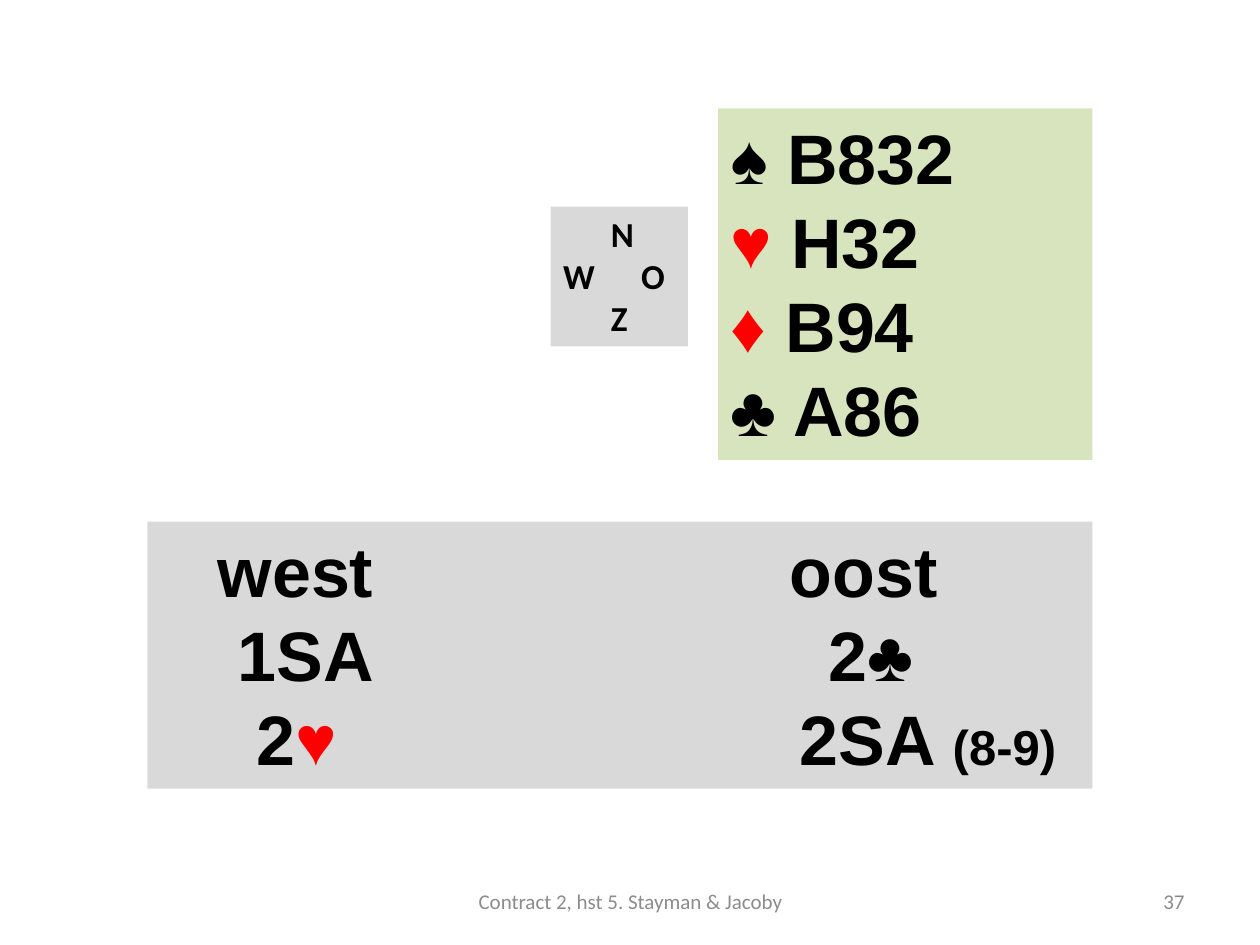
from dataclasses import dataclass

from lxml import etree
from pptx import Presentation
from pptx.dml.color import RGBColor
from pptx.enum import shapes, text
from pptx.oxml.ns import qn
from pptx.util import Inches, Pt


@dataclass(frozen=True)
class Theme:
    """Colours, fonts and type sizes of the slide."""
    black: str = "000000"
    red: str = "FF0000"
    grey: str = "D9D9D9"
    green: str = "D7E4BD"
    muted: str = "8C8C8C"
    card_font: str = "Arial"
    suit_font: str = "Times New Roman"
    label_font: str = "Calibri"
    card: int = 40
    note: int = 28
    compass: int = 20
    footer: int = 12


T = Theme()


def add_run(p, content, font=T.card_font, size=T.card, color=T.black, bold=True):
    """Append one formatted run to a paragraph."""
    r = p.add_run()
    r.text = content
    r.font.name, r.font.size, r.font.bold = font, Pt(size), bold
    r.font.color.rgb = RGBColor.from_string(color)


def add_panel(s, box, fill):
    """Add a plain filled rectangle and return its text frame."""
    sp = s.shapes.add_shape(shapes.MSO_SHAPE.RECTANGLE, *map(Inches, box))
    sp.shadow.inherit = False
    sp.fill.solid()
    sp.fill.fore_color.rgb = RGBColor.from_string(fill)
    sp.line.fill.background()
    tf = sp.text_frame
    tf.word_wrap = True
    tf.vertical_anchor = text.MSO_ANCHOR.TOP
    return tf


def add_line(tf, index, tabs=()):
    """Return the left-aligned paragraph at an index, with tab stops in inches."""
    p = tf.paragraphs[0] if index == 0 else tf.add_paragraph()
    p.alignment = text.PP_ALIGN.LEFT
    if tabs:
        stops = etree.SubElement(p._p.get_or_add_pPr(), qn("a:tabLst"))
        for stop in tabs:
            etree.SubElement(stops, qn("a:tab"), pos=str(Inches(stop)), algn="l")
    return p


def add_hand(s, box):
    """Show the four suits of one hand."""
    tf = add_panel(s, box, T.green)
    hand = [("♠", "B832", T.black, T.suit_font), ("♥", "H32", T.red, T.card_font),
            ("♦", "B94", T.red, T.card_font), ("♣", "A86", T.black, T.card_font)]
    for i, (suit, cards, color, font) in enumerate(hand):
        p = add_line(tf, i)
        add_run(p, suit, color=color, font=font)
        add_run(p, f" {cards}")


def add_compass(s, box):
    """Show the four wind directions."""
    tf = add_panel(s, box, T.grey)
    for i, (label, stop) in enumerate([("\tN", 0.38), ("W\tO", 0.62), ("\tZ", 0.38)]):
        add_run(add_line(tf, i, [stop]), label, font=T.label_font, size=T.compass)


def add_bidding(s, box):
    """Show the bids of west and east in two columns."""
    tf = add_panel(s, box, T.grey)
    bids = [((0.46, 5.0), [("\twest\toost", {})]),
            ((0.62, 5.31), [("\t1SA\t2♣", {})]),
            ((0.77, 5.08), [("\t2", {}), ("♥", {"color": T.red}), ("\t2SA ", {}),
                            ("(8-9)", {"size": T.note})])]
    for i, (tabs, runs) in enumerate(bids):
        p = add_line(tf, i, tabs)
        for content, style in runs:
            add_run(p, content, **style)


def add_footer(s, box, content, align):
    """Add one small footer text."""
    tf = s.shapes.add_textbox(*map(Inches, box)).text_frame
    tf.word_wrap = True
    tf.vertical_anchor = text.MSO_ANCHOR.MIDDLE
    p = tf.paragraphs[0]
    p.alignment = align
    add_run(p, content, font=T.label_font, size=T.footer, color=T.muted, bold=False)


def main():
    """Build and save the slide."""
    prs = Presentation()
    prs.slide_width, prs.slide_height = Inches(10), Inches(7.5)
    s = prs.slides.add_slide(prs.slide_layouts[6])
    add_hand(s, (5.7, 0.86, 2.97, 2.79))
    add_compass(s, (4.37, 1.64, 1.09, 1.11))
    add_bidding(s, (1.17, 4.14, 7.5, 2.12))
    add_footer(s, (7.17, 6.95, 2.33, 0.4), "37", text.PP_ALIGN.RIGHT)
    add_footer(s, (3.42, 6.95, 3.17, 0.4), "Contract 2, hst 5. Stayman & Jacoby",
               text.PP_ALIGN.CENTER)
    prs.save("out.pptx")


if __name__ == "__main__":
    main()
